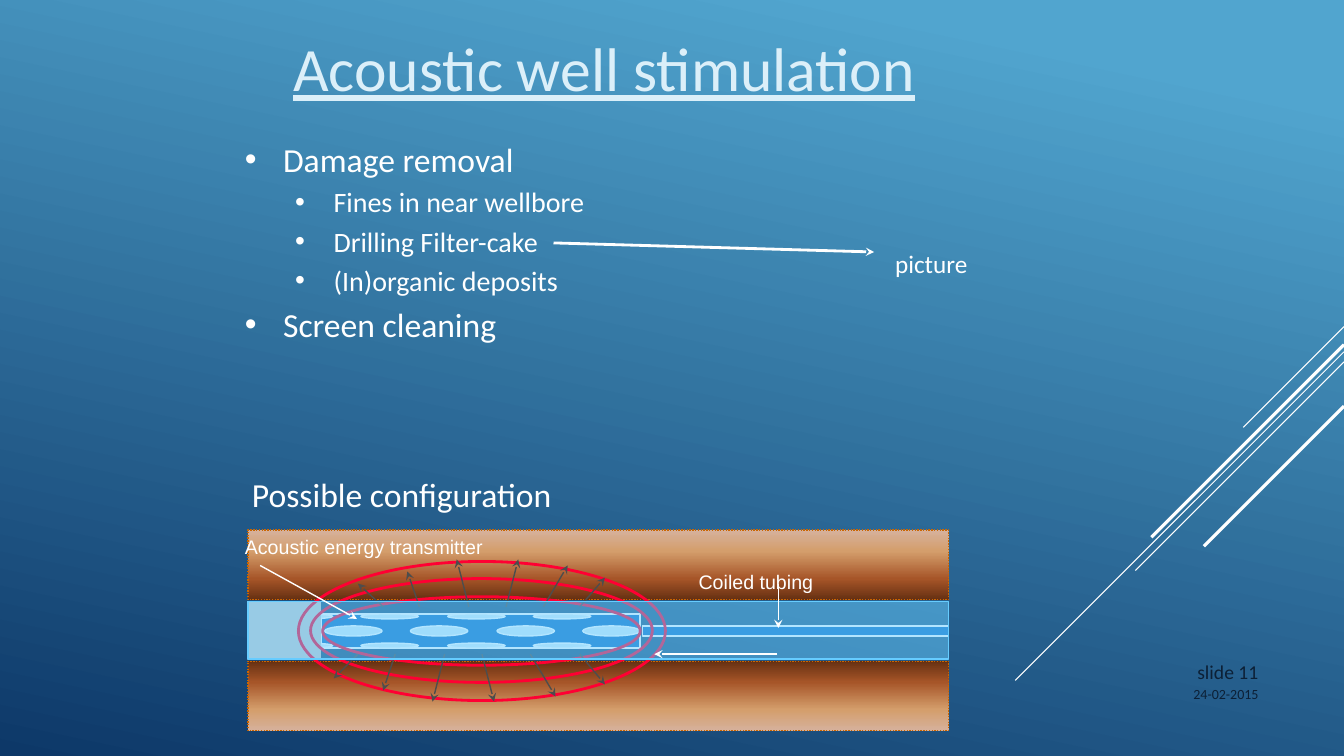
from copy import deepcopy

from lxml.etree import SubElement
from pptx import Presentation
from pptx.dml.color import RGBColor
from pptx.enum.dml import MSO_LINE
from pptx.enum.shapes import MSO_CONNECTOR, MSO_SHAPE
from pptx.enum.text import MSO_ANCHOR, PP_ALIGN
from pptx.oxml.ns import qn
from pptx.util import Pt

PX = 9144  # 100 px to the inch
WIDE, HIGH = 1333, 750
WHITE, PALE, NAVY = "FFFFFF", "DBEFF9", "0C2036"
BLUE, SKY, RED, GREY = "0F6FC6", "66CCFF", "FF0033", "4D4D4D"
CAP, RIM = "CBCBCB", "CC6600"
ROCK = ["D6B19C", "D49E6C", "A65528", "663012"]
STOPS = [0, 30, 70, 100]


def emu(*vals):
    return [round(v * PX) for v in vals]


def rgb(code):
    return RGBColor.from_string(code)


def put(obj, **vals):
    """Set each named attribute that has a value."""
    for name, val in vals.items():
        if val is not None:
            setattr(obj, name, val)


def grade(owner, fill, stops, angle):
    """Fill with a gradient of (percent, colour) stops, angle clockwise."""
    fill.gradient()
    fill.gradient_angle = 360 - angle
    row = next(owner.element.iter(qn("a:gsLst")))
    for _ in stops[2:]:
        row.append(deepcopy(row[0]))
    for stop, (pos, code) in zip(fill.gradient_stops, stops):
        stop.position = pos / 100
        stop.color.rgb = rgb(code)


def shape(host, kind, box, fill=None, line=WHITE, width=1, alpha=None, dash=None):
    item = host.add_shape(kind, *emu(*box))
    item.shadow.inherit = False
    if fill is None:
        item.fill.background()
    elif isinstance(fill, str):
        item.fill.solid()
        item.fill.fore_color.rgb = rgb(fill)
    else:
        grade(item, item.fill, fill, 90)
    if alpha:
        tone = item.element.spPr.find(qn("a:solidFill"))[0]
        SubElement(tone, qn("a:alpha"), val=str(alpha * 1000))
    item.line.color.rgb = rgb(line)
    put(item.line, width=Pt(width), dash_style=dash)
    return item


def link(host, start, end, code=WHITE, width=1, tip=True):
    item = host.add_connector(MSO_CONNECTOR.STRAIGHT, *emu(*start, *end))
    item.line.color.rgb = rgb(code)
    item.line.width = Pt(width)
    props = item.element.spPr
    if tip:
        SubElement(props.find(qn("a:ln")), qn("a:tailEnd"), type="stealth")
    SubElement(props, qn("a:effectLst"))


def text(host, box, lines, size, code=WHITE, face="Calibri",
         align=None, anchor=MSO_ANCHOR.TOP, under=None, wrap=True):
    """Add a text box; each line is a string or a (level, string, size) bullet."""
    frame = host.add_textbox(*emu(*box)).text_frame
    put(frame, word_wrap=wrap, vertical_anchor=anchor)
    for i, line in enumerate(lines):
        para = frame.add_paragraph() if i else frame.paragraphs[0]
        level, words, points = (None, line, size) if isinstance(line, str) else line
        if level is not None:
            props = para._p.get_or_add_pPr()
            left, hang = emu(38 + 50 * level, -38)
            props.set("marL", str(left))
            props.set("indent", str(hang))
            SubElement(props, qn("a:buFont"), typeface="Arial")
            SubElement(props, qn("a:buChar"), char="•")
            put(para, level=level, space_before=Pt(points * 0.2 if i else 0))
        put(para, alignment=align)
        run = para.add_run()
        run.text = words
        put(run.font, size=Pt(points), name=face, underline=under)
        run.font.color.rgb = rgb(code)


def corner(host, box):
    """Draw the diagonal rays that fall from the right edge."""
    left, top, wide, _ = box
    right = left + wide
    rays = [(0, 100, 0.75), (25, 326, 0.75), (35, 207, 0.75),
            (18, 191, 2.25), (79, 139, 2.25)]
    for drop, run, width in rays:
        link(host, (right, top + drop), (right - run, top + drop + run),
             width=width, tip=False)


def points(host, box):
    left, top, wide, high = box
    lines = [(0, "Damage removal", 24), (1, "Fines in near wellbore", 20),
             (1, "Drilling Filter-cake", 20), (1, "(In)organic deposits", 20),
             (0, "Screen cleaning", 24)]
    text(host, box, lines, 24)
    link(host, (left + 316, top + 108), (left + 634, top + 117), width=2)
    text(host, (left + 645, top + 108, 176, 40), ["picture"], 18)


def well(host, box):
    """Draw the cut through the well with the transmitter and its waves."""
    left, top, wide, high = box
    rect, oval = MSO_SHAPE.RECTANGLE, MSO_SHAPE.OVAL
    band = 69

    def at(x, y, *size):
        return (left + x, top + y, *size)

    def rock(y, tones):
        shape(host, rect, at(0, y, wide, band), list(zip(STOPS, tones)),
              RIM, dash=MSO_LINE.ROUND_DOT)

    rock(0, ROCK)
    shape(host, rect, at(73, 83, 316, 34), BLUE)
    shape(host, rect, at(391, 95, wide - 391, 10), BLUE)
    for x, y, deep in [(76, 95, 10), (27, 83, 5), (27, 112, 5)]:
        for i in range(4):
            shape(host, oval, at(x + round(85.4 * i), y, 57, deep), PALE)
    shape(host, rect, at(0, 71, 72, 57), CAP, CAP)
    rock(high - band, ROCK[::-1])
    for ring in [(62, 48, 339, 103), (74, 66, 315, 68), (50, 31, 364, 138)]:
        shape(host, oval, at(*ring), line=RED, width=2)

    text(host, at(437, 35, 222, 34), ["Coiled tubing"], 14, face="Arial")
    text(host, at(-13, 0, 257, 34), ["Acoustic energy transmitter"], 14, face="Arial")

    waves = {
        123: [(109, 85, 147), (146, 134, 159), (195, 183, 170),
              (232, 244, 170), (280, 305, 165), (329, 354, 153)],
        76: [(170, 158, 41), (219, 207, 29), (256, 268, 29),
             (293, 317, 35), (329, 354, 47), (134, 109, 53)],
    }
    for base, rays in waves.items():
        for x, *tip in rays:
            link(host, at(x, base), at(*tip), GREY)
    shape(host, rect, at(0, 71, wide, 57), SKY, SKY, alpha=50)
    for start, end in [((525, 123), (403, 123)), ((526, 53), (526, 97)),
                       ((12, 35), (108, 88))]:
        link(host, at(*start), at(*end))


def footer(host, box):
    left, top, wide, high = box
    text(host, (left, top, 125, 73), ["slide 11"], 14, NAVY,
         align=PP_ALIGN.RIGHT, anchor=MSO_ANCHOR.BOTTOM)
    text(host, (left - 50, top + 65, 175, 40), ["24-02-2015"], 10, NAVY,
         align=PP_ALIGN.RIGHT)


def main():
    deck = Presentation()
    deck.slide_width, deck.slide_height = emu(WIDE, HIGH)
    slide = deck.slides.add_slide(deck.slide_layouts[6])
    grade(slide, slide.background.fill, [(10, "51A5CF"), (100, "0D3868")], 102)
    host = slide.shapes
    corner(host, (1007, 324, 326, 351))
    text(host, (208, 8, 783, 117), ["Acoustic well stimulation"], 44, PALE,
         align=PP_ALIGN.CENTER, anchor=MSO_ANCHOR.MIDDLE, under=True)
    points(host, (233, 133, 450, 283))
    well(host.add_group_shape().shapes, (246, 526, 695, 199))
    text(host, (240, 465, 320, 51), ["Possible configuration"], 24, wrap=False)
    footer(host, (1133, 610, 125, 105))
    deck.save("out.pptx")


if __name__ == "__main__":
    main()
